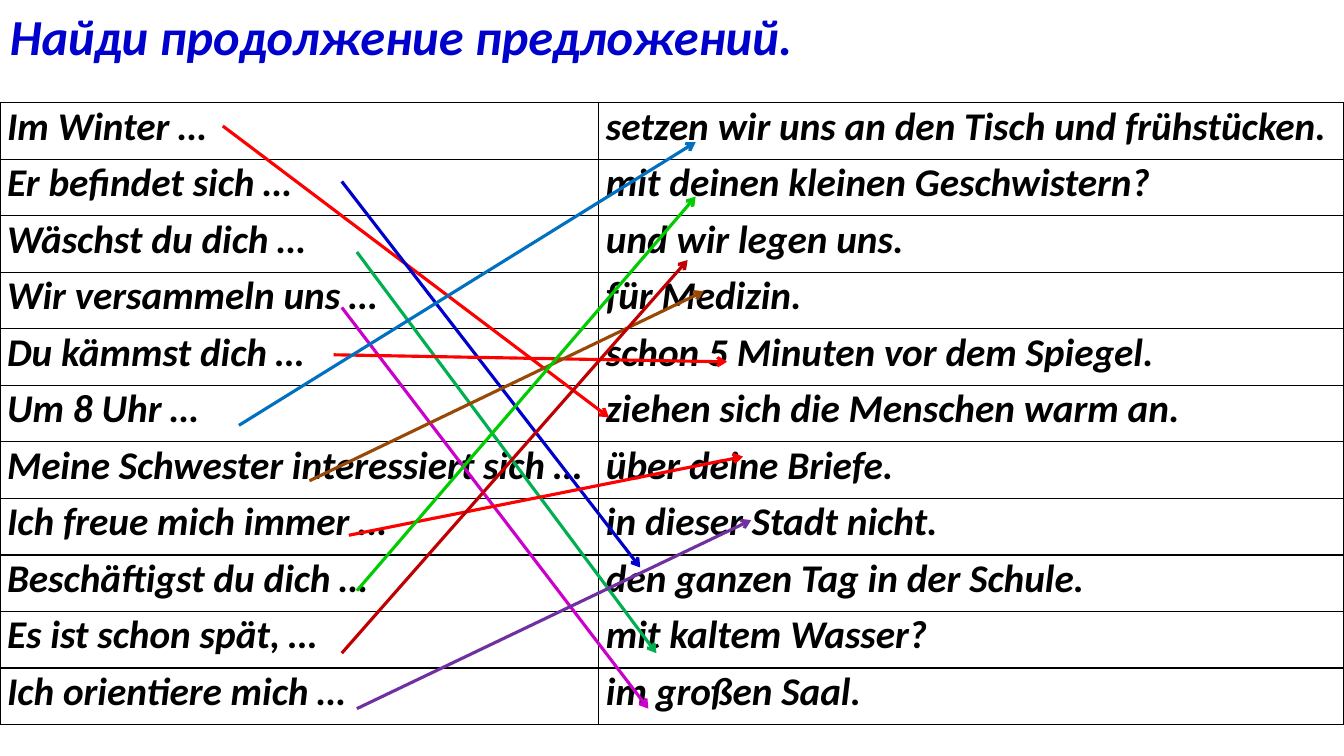
from lxml import etree
from pptx import Presentation
from pptx import util as u
from pptx.dml.color import RGBColor
from pptx.enum import shapes, text
from pptx.oxml import ns

BLACK = RGBColor(0x00, 0x00, 0x00)
TITLE_BLUE = RGBColor(0x00, 0x00, 0xCC)
RED = RGBColor(0xFF, 0x00, 0x00)
GREEN = RGBColor(0x00, 0xB0, 0x50)
MAGENTA = RGBColor(0xCC, 0x00, 0xCC)
SKY = RGBColor(0x00, 0x70, 0xC0)
BROWN = RGBColor(0x98, 0x48, 0x07)
LIME = RGBColor(0x00, 0xCC, 0x00)
DARK_RED = RGBColor(0xC0, 0x00, 0x00)
PURPLE = RGBColor(0x70, 0x30, 0xA0)

WIDTH, HEIGHT = 13.33, 7.5
TABLE_TOP, TABLE_HEIGHT = 1.02, 6.17
COLUMNS = (5.94, 7.39)

sentences = [
    ("Im Winter …", "setzen wir uns an den Tisch und frühstücken."),
    ("Er befindet sich …", "mit deinen kleinen Geschwistern?"),
    ("Wäschst du dich …", "und wir legen uns."),
    ("Wir versammeln uns …", "für Medizin."),
    ("Du kämmst dich …", "schon 5 Minuten vor dem Spiegel."),
    ("Um 8 Uhr …", "ziehen sich die Menschen warm an."),
    ("Meine Schwester interessiert sich …", "über deine Briefe."),
    ("Ich freue mich immer …", "in dieser Stadt nicht."),
    ("Beschäftigst du dich …", "den ganzen Tag in der Schule."),
    ("Es ist schon spät, …", "mit kaltem Wasser?"),
    ("Ich orientiere mich …", "im großen Saal."),
]

answers = [
    (2.21, 1.25, 6.04, 4.14, RED),
    (3.39, 1.80, 6.35, 5.63, TITLE_BLUE),
    (3.54, 2.50, 6.51, 6.48, GREEN),
    (3.39, 3.05, 6.43, 7.03, MAGENTA),
    (3.31, 3.52, 7.21, 3.59, RED),
    (2.37, 4.22, 6.90, 1.41, SKY),
    (3.07, 4.77, 6.98, 2.89, BROWN),
    (3.46, 5.31, 7.37, 4.53, RED),
    (3.54, 5.86, 6.90, 1.95, LIME),
    (3.39, 6.48, 6.82, 2.58, DARK_RED),
    (3.54, 7.03, 7.45, 5.16, PURPLE),
]


def write(paragraph, words, size, color):
    run = paragraph.add_run()
    run.text = words
    run.font.name = "Calibri"
    run.font.size = u.Pt(size)
    run.font.bold = run.font.italic = True
    run.font.color.rgb = color


def add_border(cell, side):
    border = etree.SubElement(cell._tc.get_or_add_tcPr(), ns.qn("a:" + side), w=str(u.Pt(1)))
    fill = etree.SubElement(border, ns.qn("a:solidFill"))
    etree.SubElement(fill, ns.qn("a:srgbClr"), val=str(BLACK))


prs = Presentation()
prs.slide_width, prs.slide_height = u.Inches(WIDTH), u.Inches(HEIGHT)
slide = prs.slides.add_slide(prs.slide_layouts[6])

matching = slide.shapes.add_table(
    len(sentences), len(COLUMNS), 0, u.Inches(TABLE_TOP), u.Inches(WIDTH), u.Inches(TABLE_HEIGHT)
).table
matching.first_row = matching.horz_banding = False
for column, width in zip(matching.columns, COLUMNS):
    column.width = u.Inches(width)

for row, halves in zip(matching.rows, sentences):
    row.height = u.Inches(TABLE_HEIGHT / len(sentences))
    for cell, half in zip(row.cells, halves):
        cell.margin_left = cell.margin_right = u.Inches(0.07)
        cell.margin_top = cell.margin_bottom = 0
        for side in ("lnL", "lnR", "lnT", "lnB"):
            add_border(cell, side)
        cell.fill.background()
        paragraph = cell.text_frame.paragraphs[0]
        paragraph.alignment = text.PP_ALIGN.JUSTIFY
        write(paragraph, half, 28, BLACK)

task = slide.shapes.add_textbox(0, 0, u.Inches(WIDTH), u.Inches(0.71)).text_frame
task.word_wrap = True
task.auto_size = text.MSO_AUTO_SIZE.SHAPE_TO_FIT_TEXT
task.vertical_anchor = text.MSO_ANCHOR.MIDDLE
write(task.paragraphs[0], "Найди продолжение предложений.", 36, TITLE_BLUE)

for x1, y1, x2, y2, color in answers:
    answer = slide.shapes.add_connector(
        shapes.MSO_CONNECTOR.STRAIGHT, u.Inches(x1), u.Inches(y1), u.Inches(x2), u.Inches(y2)
    )
    answer.line.color.rgb = color
    answer.line.width = u.Pt(2.25)
    etree.SubElement(answer.line._get_or_add_ln(), ns.qn("a:tailEnd"), type="arrow")
    etree.SubElement(answer._element.spPr, ns.qn("a:effectLst"))

prs.save("out.pptx")
